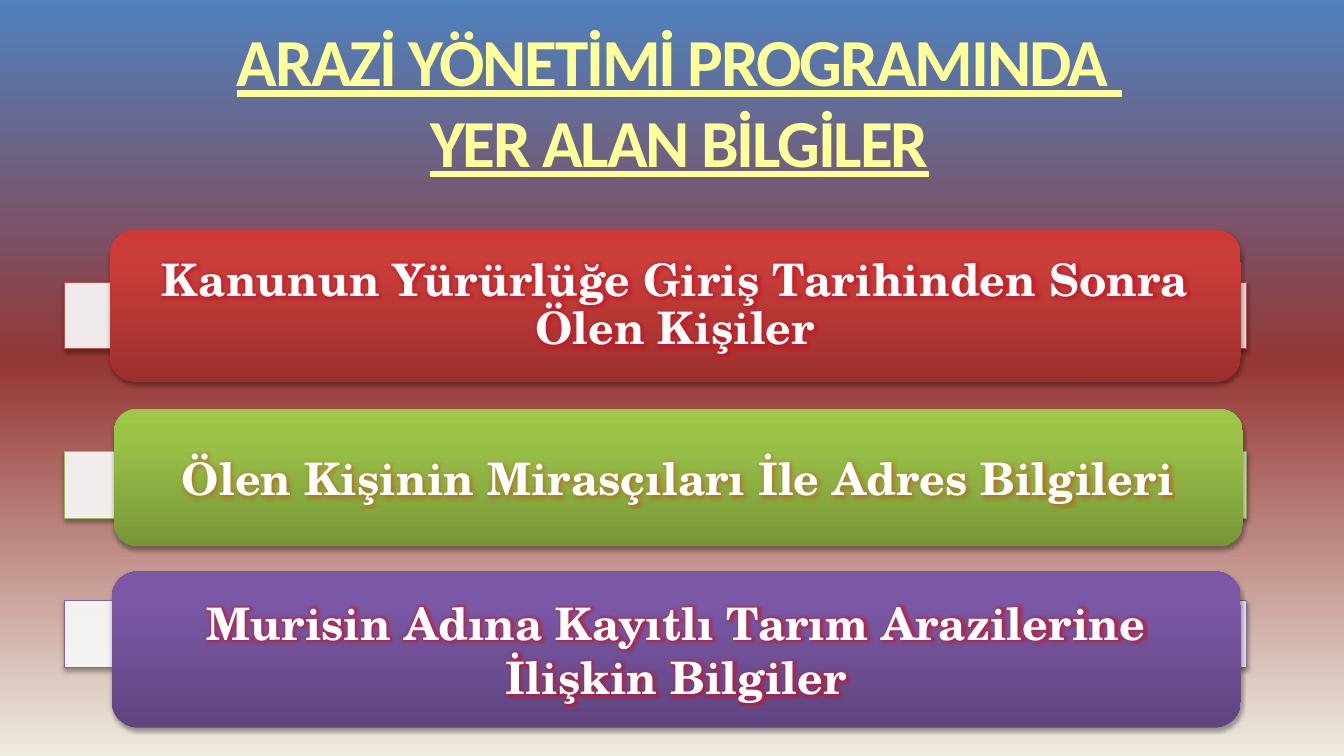
"""Build the slide on the information held in the land management program."""
from dataclasses import dataclass

from lxml import etree
from pptx import Presentation
from pptx.dml.color import RGBColor
from pptx.dml.fill import FillFormat
from pptx.enum.shapes import MSO_SHAPE as SHAPE
from pptx.enum.text import MSO_ANCHOR as ANCHOR, PP_ALIGN as ALIGN
from pptx.oxml.ns import qn
from pptx.shapes.autoshape import Shape
from pptx.slide import Slide
from pptx.util import Pt

WHITE = RGBColor(0xFF, 0xFF, 0xFF)
BLACK = RGBColor(0x00, 0x00, 0x00)
BLUE = RGBColor(0x4F, 0x81, 0xBD)
MAROON = RGBColor(0x95, 0x37, 0x35)
CREAM = RGBColor(0xEE, 0xEC, 0xE1)
RED = RGBColor(0xC0, 0x50, 0x4D)
RED_DARK = RGBColor(0x9C, 0x2F, 0x2D)
RED_MID = RGBColor(0xCB, 0x3E, 0x3A)
RED_LIGHT = RGBColor(0xCE, 0x3B, 0x37)
GREEN = RGBColor(0x9B, 0xBB, 0x59)
GREEN_DARK = RGBColor(0x77, 0x97, 0x37)
GREEN_MID = RGBColor(0x9B, 0xC3, 0x48)
GREEN_LIGHT = RGBColor(0x9D, 0xC7, 0x46)
PURPLE = RGBColor(0x80, 0x64, 0xA2)
PURPLE_DARK = RGBColor(0x5F, 0x44, 0x80)
PURPLE_MID = RGBColor(0x7B, 0x58, 0xA6)
PURPLE_LIGHT = RGBColor(0x7C, 0x57, 0xA8)
YELLOW_PALE = RGBColor(0xFF, 0xFF, 0xB9)
YELLOW = RGBColor(0xFF, 0xFF, 0x99)
AMBER = RGBColor(0xF6, 0xAE, 0x1E)
GLOW_RED = RGBColor(0xC8, 0x10, 0x20)
GLOW_ORANGE = RGBColor(0xC8, 0x4A, 0x10)

Stops = list[tuple[int, RGBColor]]
BAR_LEFT, BAR_WIDTH, BAR_HEIGHT = 46.1, 844.6, 47.5
TITLE_LINES = ("ARAZİ YÖNETİMİ PROGRAMINDA ", "YER ALAN BİLGİLER")


@dataclass(frozen=True)
class Item:
    text: str
    bar_top: float
    left: float
    top: float
    width: float
    height: float
    outline: RGBColor
    shades: tuple[RGBColor, RGBColor, RGBColor]
    glow: RGBColor
    line_spacing: float = 1.0


ITEMS = (
    Item("Kanunun Yürürlüğe Giriş Tarihinden Sonra Ölen Kişiler",
         201.6, 78.5, 164.2, 807.8, 108.7, RED,
         (RED_DARK, RED_MID, RED_LIGHT), GLOW_RED, 0.9),
    Item("Ölen Kişinin Mirasçıları İle Adres Bilgileri",
         322.6, 81.4, 292.3, 806.4, 97.9, GREEN,
         (GREEN_DARK, GREEN_MID, GREEN_LIGHT), GLOW_ORANGE),
    Item("Murisin Adına Kayıtlı Tarım Arazilerine İlişkin Bilgiler",
         429.1, 79.9, 408.2, 806.4, 111.6, PURPLE,
         (PURPLE_DARK, PURPLE_MID, PURPLE_LIGHT), GLOW_RED),
)


def add_color(parent: etree._Element, color: RGBColor, alpha: int = 100) -> None:
    clr = etree.SubElement(parent, qn("a:srgbClr"), val=str(color))
    if alpha < 100:
        etree.SubElement(clr, qn("a:alpha"), val=str(alpha * 1000))


def set_gradient(fill: FillFormat, root: etree._Element, stops: Stops,
                 angle: int) -> None:
    fill.gradient()
    fill.gradient_angle = angle
    gs_list = next(root.iter(qn("a:gsLst")))
    for old in list(gs_list):
        gs_list.remove(old)
    for position, color in stops:
        add_color(etree.SubElement(gs_list, qn("a:gs"), pos=str(position * 1000)), color)


def add_shadow(sp: Shape) -> None:
    sp.shadow.inherit = False
    effects = sp._element.spPr.find(qn("a:effectLst"))
    shadow = etree.SubElement(effects, qn("a:outerShdw"), blurRad=str(Pt(3.1)),
                              dist=str(Pt(1.8)), dir="5400000", rotWithShape="0")
    add_color(shadow, BLACK, 35)


def add_glow(font_props: etree._Element, color: RGBColor) -> None:
    effects = etree.Element(qn("a:effectLst"))
    font_props.find(qn("a:latin")).addprevious(effects)
    add_color(etree.SubElement(effects, qn("a:glow"), rad=str(Pt(5))), color, 60)


def add_bar(s: Slide, item: Item) -> None:
    sp = s.shapes.add_shape(SHAPE.RECTANGLE, Pt(BAR_LEFT), Pt(item.bar_top),
                            Pt(BAR_WIDTH), Pt(BAR_HEIGHT))
    sp.fill.solid()
    sp.fill.fore_color.rgb = WHITE
    clr = sp._element.spPr.find(qn("a:solidFill")).find(qn("a:srgbClr"))
    etree.SubElement(clr, qn("a:alpha"), val="90000")
    sp.line.color.rgb = item.outline
    sp.line.width = Pt(0.75)
    add_shadow(sp)


def add_panel(s: Slide, item: Item) -> None:
    sp = s.shapes.add_shape(SHAPE.ROUNDED_RECTANGLE, Pt(item.left), Pt(item.top),
                            Pt(item.width), Pt(item.height))
    set_gradient(sp.fill, sp._element, list(zip((0, 80, 100), item.shades)), 90)
    sp.line.fill.background()
    add_shadow(sp)
    tf = sp.text_frame
    tf.word_wrap = True
    tf.vertical_anchor = ANCHOR.MIDDLE
    tf.margin_left = tf.margin_right = Pt(22.3)
    tf.margin_top = tf.margin_bottom = Pt(0)
    p = tf.paragraphs[0]
    p.text = item.text
    p.alignment = ALIGN.CENTER
    p.line_spacing = item.line_spacing
    p.font.name = "TeX Gyre Schola"
    p.font.size = Pt(32)
    p.font.bold = True
    p.font.color.rgb = WHITE
    add_glow(next(p._p.iter(qn("a:defRPr"))), item.glow)


def add_title(s: Slide) -> None:
    tf = s.shapes.add_textbox(Pt(88.6), Pt(15.1), Pt(793.4), Pt(113)).text_frame
    tf.word_wrap = True
    tf.vertical_anchor = ANCHOR.MIDDLE
    for i, line in enumerate(TITLE_LINES):
        p = tf.add_paragraph() if i else tf.paragraphs[0]
        p.text = line
        p.alignment = ALIGN.CENTER
        p.font.name = "Calibri"
        p.font.size = Pt(48)
        p.font.bold = True
        p.font.underline = True
        set_gradient(p.font.fill, p._p,
                     [(0, YELLOW_PALE), (36, YELLOW), (86, AMBER)], 270)
        next(p._p.iter(qn("a:defRPr"))).set("spc", "-150")


def main() -> None:
    prs = Presentation()
    prs.slide_width, prs.slide_height = Pt(960), Pt(540)
    s = prs.slides.add_slide(prs.slide_layouts[6])
    set_gradient(s.background.fill, s._element,
                 [(0, BLUE), (48, MAROON), (100, CREAM)], 270)
    for item in ITEMS:
        add_bar(s, item)
        add_panel(s, item)
    add_title(s)
    prs.save("out.pptx")


if __name__ == "__main__":
    main()
